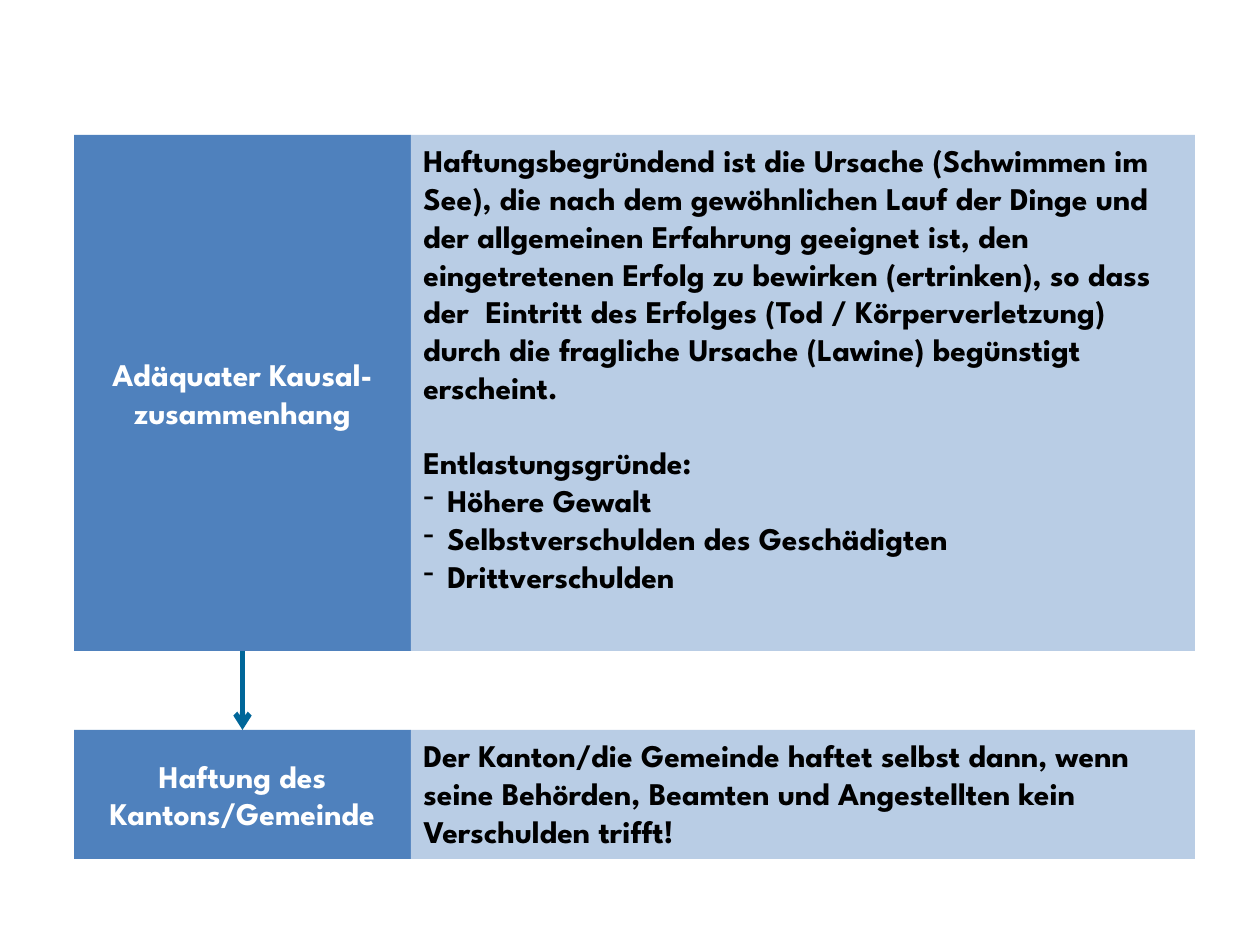
from lxml import etree
from pptx import Presentation
from pptx.dml.color import RGBColor
from pptx.enum.shapes import MSO_CONNECTOR, MSO_SHAPE
from pptx.enum.text import MSO_ANCHOR, PP_ALIGN
from pptx.oxml.ns import qn
from pptx.util import Pt

PX = 914400 / 126
RECTANGLE, STRAIGHT = MSO_SHAPE.RECTANGLE, MSO_CONNECTOR.STRAIGHT
TOP, MIDDLE = MSO_ANCHOR.TOP, MSO_ANCHOR.MIDDLE
LEFT, CENTER = PP_ALIGN.LEFT, PP_ALIGN.CENTER
FONT = "League Spartan"
COLORS = {"label": "4F81BD", "detail": "B9CDE5", "arrow": "006699",
          "light": "FFFFFF", "dark": "000000"}


def px(value):
    return round(value * PX)


def add_panel(slide, left, top, width, height, fill, color, anchor, align, lines):
    panel = slide.shapes.add_shape(RECTANGLE, px(left), px(top), px(width), px(height))
    panel.shadow.inherit = False
    panel.fill.solid()
    panel.fill.fore_color.rgb = RGBColor.from_string(COLORS[fill])
    panel.line.fill.background()
    frame = panel.text_frame
    frame.word_wrap = True
    frame.vertical_anchor = anchor
    frame.text = "\n".join(lines)
    for paragraph in frame.paragraphs:
        paragraph.alignment = align
        for run in paragraph.runs:
            run.font.name = FONT
            run.font.size = Pt(18)
            run.font.bold = True
            run.font.color.rgb = RGBColor.from_string(COLORS[color])
    return panel


prs = Presentation()
prs.slide_width, prs.slide_height = px(1260), px(945)
slide = prs.slides.add_slide(prs.slide_layouts[6])

# Rows: top, height, label, explanation
rows = [
    (135, 516, "Adäquater Kausal-zusammenhang", [
        "Haftungsbegründend ist die Ursache (Schwimmen im See), die nach dem "
        "gewöhnlichen Lauf der Dinge und der allgemeinen Erfahrung geeignet ist, "
        "den eingetretenen Erfolg zu bewirken (ertrinken), so dass der  Eintritt "
        "des Erfolges (Tod / Körperverletzung) durch die fragliche Ursache "
        "(Lawine) begünstigt erscheint.",
        "Entlastungsgründe:",
        "Höhere Gewalt",
        "Selbstverschulden des Geschädigten",
        "Drittverschulden"]),
    (730, 129, "Haftung des Kantons/Gemeinde", [
        "Der Kanton/die Gemeinde haftet selbst dann, wenn seine Behörden, "
        "Beamten und Angestellten kein Verschulden trifft!"]),
]
labels, details = [], []
for top, height, label, explanation in rows:
    labels.append(add_panel(slide, 74, top, 337, height, "label", "light",
                            MIDDLE, CENTER, [label]))
    details.append(add_panel(slide, 411, top, 784, height, "detail", "dark",
                             TOP, LEFT, explanation))

# Grounds for exoneration as a dashed list
heading, *grounds = details[0].text_frame.paragraphs[1:]
heading.space_before = Pt(21.5)
for ground in grounds:
    properties = ground._p.get_or_add_pPr()
    properties.set("marL", str(px(24)))
    properties.set("indent", str(px(-24)))
    etree.SubElement(properties, qn("a:buChar")).set("char", "-")

# Arrow from cause to liability
arrow = slide.shapes.add_connector(STRAIGHT, 0, 0, 0, 0)
arrow.begin_connect(labels[0], 2)
arrow.end_connect(labels[1], 0)
arrow.line.color.rgb = RGBColor.from_string(COLORS["arrow"])
arrow.line.width = Pt(3)
etree.SubElement(arrow.line._get_or_add_ln(), qn("a:tailEnd")).set("type", "arrow")
etree.SubElement(arrow._element.spPr, qn("a:effectLst"))

prs.save("out.pptx")
